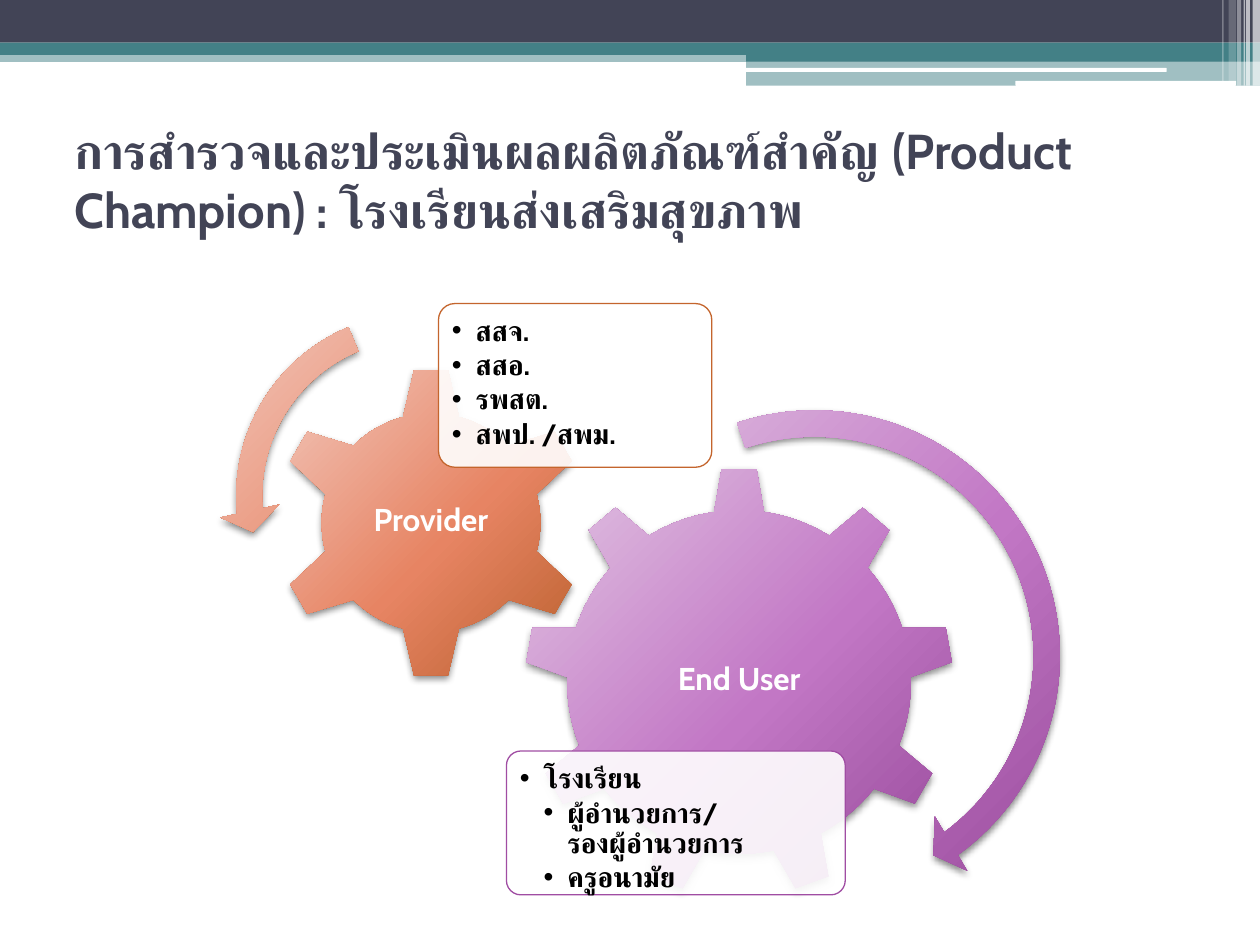
"""Build the school health survey slide with two gears."""
import pptx
import pptx.dml.color
import pptx.enum.shapes
import pptx.enum.text
import pptx.oxml
import pptx.oxml.ns
import pptx.util
import lxml.etree

Cm = pptx.util.Cm
Pt = pptx.util.Pt
KIND = pptx.enum.shapes.MSO_SHAPE
ANCHOR = pptx.enum.text.MSO_ANCHOR
ALIGN = pptx.enum.text.PP_ALIGN
qn = pptx.oxml.ns.qn

COLORS = {
    "navy": "424456", "teal": "438086", "white": "FFFFFF", "black": "000000",
    "plum": "A04DA3", "rust": "C4652D",
}
SHADES = {
    "plum": ("E2C6E3", "C277C5", "954898"),
    "rust": ("F2C9BF", "E78463", "B75E2A"),
}


def tint(name):
    """Return the named colour."""
    return pptx.dml.color.RGBColor.from_string(COLORS[name])


def place(shape, box):
    """Move a shape to a box in centimetres."""
    shape.left, shape.top, shape.width, shape.height = map(Cm, box)


def draw(slide, kind, box, fill=None, alpha=100, line=None, adj=()):
    """Add a preset shape with flat fill and outline."""
    shape = slide.shapes.add_shape(kind, *map(Cm, box))
    for i, value in enumerate(adj):
        shape.adjustments[i] = value
    if fill:
        shape.shadow.inherit = False
        shape.fill.solid()
        shape.fill.fore_color.rgb = tint(fill)
        if alpha < 100:
            color = shape._element.spPr.find(".//" + qn("a:srgbClr"))
            lxml.etree.SubElement(color, qn("a:alpha"), val=str(alpha * 1000))
    if line:
        shape.line.color.rgb = tint(line)
        shape.line.width = Pt(0.75)
    else:
        shape.line.fill.background()
    return shape


def shade(shape, name):
    """Give a shape a round gradient and a soft shadow."""
    space = pptx.oxml.ns.nsdecls("a")
    stops = "".join(
        f'<a:gs pos="{pos}000"><a:srgbClr val="{color}"/></a:gs>'
        for pos, color in zip((0, 55, 100), SHADES[name]))
    grad = pptx.oxml.parse_xml(
        f'<a:gradFill {space} rotWithShape="1"><a:gsLst>{stops}</a:gsLst>'
        '<a:path path="circle"><a:fillToRect l="-40000" t="-90000" '
        'r="140000" b="190000"/></a:path></a:gradFill>')
    glow = pptx.oxml.parse_xml(
        f'<a:effectLst {space}><a:outerShdw blurRad="{Pt(4)}" dist="{Pt(2)}" '
        'dir="5400000" rotWithShape="0"><a:srgbClr val="000000">'
        '<a:alpha val="45000"/></a:srgbClr></a:outerShdw></a:effectLst>')
    props = shape._element.spPr
    props.find(qn("a:prstGeom")).addnext(grad)
    props.append(glow)


def write(shape, text, size=16, color="black", align=ALIGN.LEFT,
          anchor=ANCHOR.TOP, inset=0.18, space=0.9, after=0, level=None):
    """Write one paragraph, the first one into an empty frame."""
    frame = shape.text_frame
    frame.word_wrap = True
    frame.auto_size = pptx.enum.text.MSO_AUTO_SIZE.NONE
    frame.vertical_anchor = anchor
    frame.margin_left = frame.margin_right = Cm(inset)
    frame.margin_top = frame.margin_bottom = Cm(inset)
    para = frame.add_paragraph() if frame.text else frame.paragraphs[0]
    para.text = text
    para.alignment = align
    para.line_spacing = space
    para.space_before, para.space_after = Pt(0), Pt(after)
    for run in para.runs:
        font = run.font
        font.name, font.size, font.bold = "Cabin", Pt(size), True
        font.color.rgb = tint(color)
    if level is not None:
        para.level = level
        props = para._p.get_or_add_pPr()
        props.set("marL", str(Cm(0.48 * (level + 1))))
        props.set("indent", str(Cm(-0.48)))
        lxml.etree.SubElement(props, qn("a:buChar"), char="•")


def header(slide, box):
    """Draw the bands, tabs and stripes along the top."""
    x, y, width, _ = box
    half = x + 15.04
    bands = [
        (x, 1.02, width, 0.23, "teal", 50),
        (x, 0, width, 0.86, "navy", 100),
        (x, 0.86, width, 0.25, "teal", 100),
        (half, 0.99, width - 15.04, 0.25, "teal", 100),
        (half, 1.22, width - 15.04, 0.51, "teal", 50),
    ]
    for left, top, wide, high, fill, alpha in bands:
        draw(slide, KIND.RECTANGLE, (left, y + top, wide, high), fill, alpha)
    for left, top, wide, high in [(15.01, 1.37, 8.51, 0.08),
                                  (20.47, 1.63, 4.45, 0.1)]:
        draw(slide, KIND.ROUNDED_RECTANGLE, (x + left, y + top, wide, high),
             "white")
    stripes = [
        (25.25, 0.15, 1.73, 65), (25.12, 0.08, 1.73, 65),
        (25.07, 0.03, 1.73, 60), (24.94, 0.08, 1.73, 40),
        (24.77, 0.15, 1.63, 20), (24.64, 0.03, 1.63, 30),
    ]
    for left, wide, high, alpha in stripes:
        draw(slide, KIND.RECTANGLE, (x + left, y, wide, high), "white", alpha)


def title(slide, box, text):
    """Set the slide title."""
    head = slide.shapes.title
    place(head, box)
    write(head, text, size=28, color="navy", anchor=ANCHOR.MIDDLE,
          inset=0.2, space=1)
    slide.shapes._spTree.append(head._element)


def gear(slide, box, kind, name, label, inner):
    """Draw a gear with its label in the given part of the box."""
    x, y, width, height = box
    shade(draw(slide, kind, box), name)
    left, top, wide, high = inner
    area = (x + left * width, y + top * height, wide * width, high * height)
    text = slide.shapes.add_textbox(*map(Cm, area))
    write(text, label, size=18, color="white", align=ALIGN.CENTER,
          anchor=ANCHOR.MIDDLE, inset=0.08)


def card(slide, box, name, slot, items):
    """Draw a card and put a bulleted list on it."""
    x, y, width, height = box
    draw(slide, KIND.ROUNDED_RECTANGLE, box, "white", 90, name, (0.1,))
    body = slide.placeholders[slot]
    gap = 0.09
    place(body, (x + gap, y + gap, width - 2 * gap, height - 2 * gap))
    for level, text in items:
        write(body, text, after=2.4, level=level)
    slide.shapes._spTree.append(body._element)


def main():
    """Build and save the slide."""
    deck = pptx.Presentation()
    deck.slide_width, deck.slide_height = Cm(25.4), Cm(19.05)
    slide = deck.slides.add_slide(deck.slide_layouts[3])
    header(slide, (0, 0, 25.4, 1.73))
    title(slide, (1.3, 2.13, 22.86, 2.97),
          "การสำรวจและประเมินผลผลิตภัณฑ์สำคัญ (Product Champion) : "
          "โรงเรียนส่งเสริมสุขภาพ")
    gear(slide, (10.57, 9.42, 8.66, 8.66), KIND.GEAR_9, "plum", "End User",
         (0.2, 0.24, 0.6, 0.51))
    card(slide, (10.21, 15.14, 6.83, 2.9), "plum", 1,
         [(0, "โรงเรียน"), (1, "ผู้อำนวยการ/\vรองผู้อำนวยการ"),
          (1, "ครูอนามัย")])
    gear(slide, (5.54, 7.39, 6.3, 6.3), KIND.GEAR_6, "rust", "Provider",
         (0.25, 0.25, 0.5, 0.49))
    card(slide, (8.84, 6.12, 5.51, 3.3), "rust", 2,
         [(0, text) for text in ("สสจ.", "สสอ.", "รพสต.", "สพป. /สพม.")])
    shade(draw(slide, KIND.CIRCULAR_ARROW, (11.1, 7.9, 10.64, 10.64),
               adj=(0.05, 3.13, 32.39, 150.96, 0.06)), "plum")
    shade(draw(slide, KIND.LEFT_CIRCULAR_ARROW, (4.42, 5.97, 8.05, 8.05),
               adj=(0.065, 4.3, 104.89, 148.38, 0.075)), "rust")
    deck.save("out.pptx")


if __name__ == "__main__":
    main()
